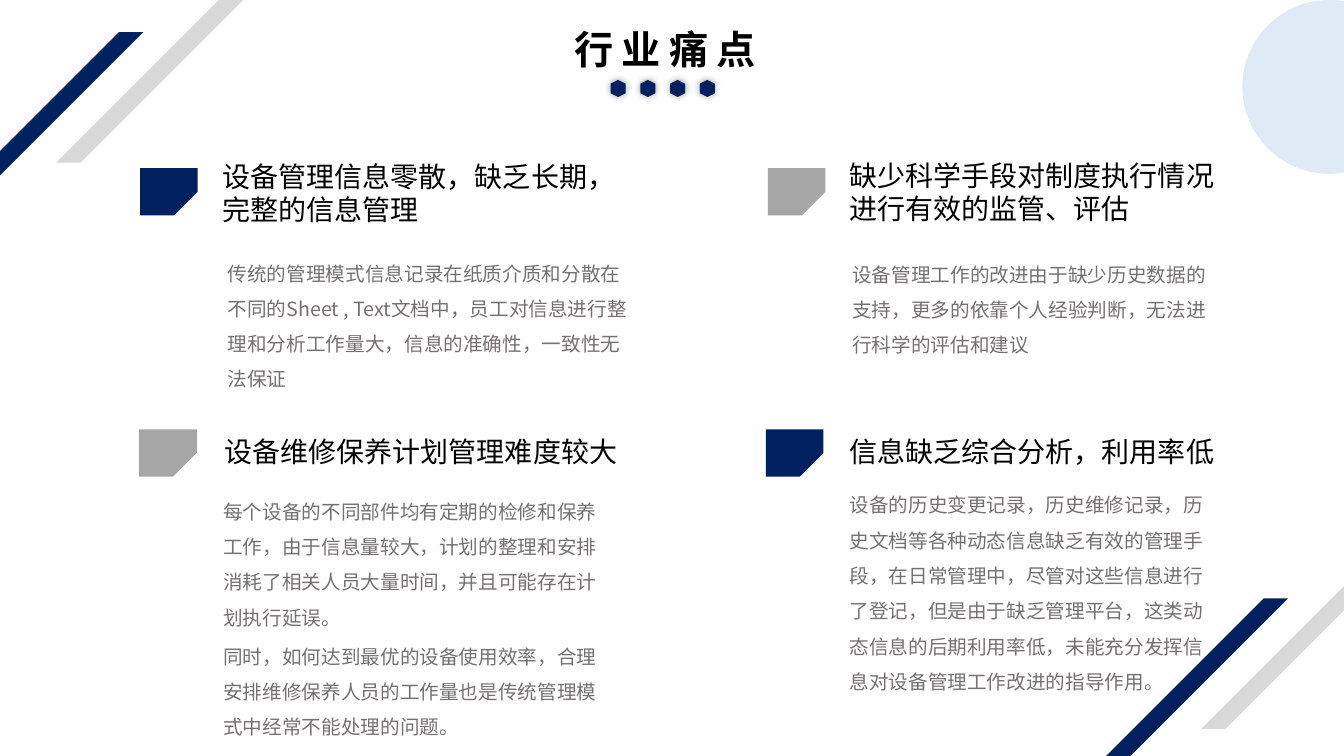
import math
import pptx
import pptx.dml.color
import pptx.enum.shapes
import pptx.enum.text
import pptx.oxml
import pptx.oxml.ns
import pptx.util
from pptx.util import Cm

FONT = "Noto Sans CJK SC"
NAVY, GREY, PALE_GREY, PALE_BLUE = "002060", "A6A6A6", "D9D9D9", "DEEBF7"
BLACK, BODY_GREY = "000000", "767171"
PAGE_WIDTH, PAGE_HEIGHT = 33.87, 19.05
SHAPES = pptx.enum.shapes.MSO_SHAPE

# Icon corner and colour; heading and body boxes are measured from that corner
POINTS = [
    dict(icon=(3.53, 4.24), color=NAVY,
         heading_box=(1.83, -0.35, 10.36, 1.96), body_box=(1.96, 1.93, 10.67, 3.84),
         heading="设备管理信息零散，缺乏长期，完整的信息管理",
         body="传统的管理模式信息记录在纸质介质和分散在不同的Sheet , Text文档中，"
              "员工对信息进行整理和分析工作量大，信息的准确性，一致性无法保证"),
    dict(icon=(3.51, 10.82), color=GREY,
         heading_box=(1.9, 0, 11.13, 1.12), body_box=(1.87, 1.35, 10.36, 6.2),
         heading="设备维修保养计划管理难度较大",
         body="每个设备的不同部件均有定期的检修和保养工作，由于信息量较大，"
              "计划的整理和安排消耗了相关人员大量时间，并且可能存在计划执行延误。\n"
              "同时，如何达到最优的设备使用效率，合理安排维修保养人员的工作量"
              "也是传统管理模式中经常不能处理的问题。"),
    dict(icon=(19.35, 4.24), color=GREY,
         heading_box=(1.81, -0.38, 9.73, 1.96), body_box=(1.88, 1.96, 9.73, 3.33),
         heading="缺少科学手段对制度执行情况进行有效的监管、评估",
         body="设备管理工作的改进由于缺少历史数据的支持，更多的依靠个人经验判断，"
              "无法进行科学的评估和建议"),
    dict(icon=(19.3, 10.82), color=NAVY,
         heading_box=(1.86, 0, 9.8, 1.12), body_box=(1.86, 1.19, 9.73, 5.97),
         heading="信息缺乏综合分析，利用率低",
         body="设备的历史变更记录，历史维修记录，历史文档等各种动态信息缺乏有效的管理手段，"
              "在日常管理中，尽管对这些信息进行了登记，但是由于缺乏管理平台，"
              "这类动态信息的后期利用率低，未能充分发挥信息对设备管理工作改进的指导作用。"),
]


def rgb(color):
    return pptx.dml.color.RGBColor.from_string(color)


def paint(shape, color):
    shape.fill.solid()
    shape.fill.fore_color.rgb = rgb(color)
    shape.line.fill.background()
    shape.shadow.inherit = False
    return shape


def add_preset(page, kind, box, color):
    return paint(page.shapes.add_shape(kind, *map(Cm, box)), color)


def write_text(frame, text, size, color, bold=False, line_spacing=1.0,
               gap=0, tracking=0, wrap=True):
    frame.word_wrap = wrap
    frame.auto_size = pptx.enum.text.MSO_AUTO_SIZE.NONE
    frame.vertical_anchor = pptx.enum.text.MSO_ANCHOR.TOP
    for index, line in enumerate(text.split("\n")):
        para = frame.add_paragraph() if index else frame.paragraphs[0]
        para.alignment = pptx.enum.text.PP_ALIGN.LEFT
        para.line_spacing = line_spacing
        para.space_before = pptx.util.Pt(gap if index else 0)
        span = para.add_run()
        span.text = line
        span.font.name = FONT
        span.font.size = pptx.util.Pt(size)
        span.font.bold = bold
        span.font.color.rgb = rgb(color)
        properties = span.font._element
        if tracking:
            properties.set("spc", str(tracking * 100))
        east_asian = pptx.oxml.parse_xml(
            f'<a:ea {pptx.oxml.ns.nsdecls("a")} typeface="{FONT}"/>')
        properties.find(pptx.oxml.ns.qn("a:latin")).addnext(east_asian)


def add_text(page, box, text, **text_format):
    write_text(page.shapes.add_textbox(*map(Cm, box)).text_frame, text, **text_format)


def add_stripes(page, left, top):
    """Navy stripe at the given corner, pale stripe up and to the right of it."""
    for color, right, up in ((NAVY, 0, 0), (PALE_GREY, 5, 3.29)):
        stripe = add_preset(page, SHAPES.PARALLELOGRAM,
                            (left + right, top - up, 7.19, 6.58), color)
        stripe.adjustments[0] = 1


def add_corner_disc(page, center_x, radius):
    """Disc that touches the top edge and is cut by the right edge."""
    cut = math.acos((PAGE_WIDTH - center_x) / radius)
    steps = 72
    angles = [cut + (2 * math.pi - 2 * cut) * step / steps for step in range(steps + 1)]
    outline = [(Cm(center_x + radius * math.cos(angle)),
                Cm(radius + radius * math.sin(angle))) for angle in angles]
    builder = page.shapes.build_freeform(*outline[0])
    builder.add_line_segments(outline[1:], close=True)
    paint(builder.convert_to_shape(), PALE_BLUE)


def add_header(page, left, top, width, height):
    title = page.shapes.title
    title.left, title.top, title.width, title.height = map(Cm, (left, top, width, height))
    write_text(title.text_frame, "行业痛点", size=28, color=BLACK, bold=True,
               tracking=6, wrap=False)
    # Row of four glowing hexagons under the title
    for index in range(4):
        dot = add_preset(page, SHAPES.HEXAGON,
                         (left + 1.14 + 0.75 * index, top + 1.53, 0.43, 0.38), NAVY)
        dot.rotation = 90
        effects = dot._element.spPr.find(pptx.oxml.ns.qn("a:effectLst"))
        effects.append(pptx.oxml.parse_xml(
            f'<a:outerShdw {pptx.oxml.ns.nsdecls("a")} blurRad="63500" dist="0" '
            'algn="ctr" rotWithShape="0"><a:srgbClr val="000000">'
            '<a:alpha val="40000"/></a:srgbClr></a:outerShdw>'))


def add_point(page, icon, color, heading_box, body_box, heading, body):
    left, top = icon
    marker = add_preset(page, SHAPES.SNIP_1_RECTANGLE, (left, top, 1.45, 1.19), color)
    marker.adjustments[0] = 0.5
    marker._element.spPr.xfrm.set("flipV", "1")

    def place(box):
        return (left + box[0], top + box[1], *box[2:])

    add_text(page, place(heading_box), heading, size=20, color=BLACK)
    add_text(page, place(body_box), body, size=14, color=BODY_GREY,
             line_spacing=1.5, gap=2.8)


def main():
    deck = pptx.Presentation()
    deck.slide_width, deck.slide_height = Cm(PAGE_WIDTH), Cm(PAGE_HEIGHT)
    page = deck.slides.add_slide(deck.slide_layouts[5])
    # Corner decoration
    add_corner_disc(page, center_x=33.5, radius=2.19)
    add_stripes(page, -3.58, 0.81)
    add_stripes(page, 25.27, 15.08)
    # Title and the four pain points
    add_header(page, 14.22, 0.51, 5.36, 1.45)
    for point in POINTS:
        add_point(page, **point)
    deck.save("out.pptx")


if __name__ == "__main__":
    main()
